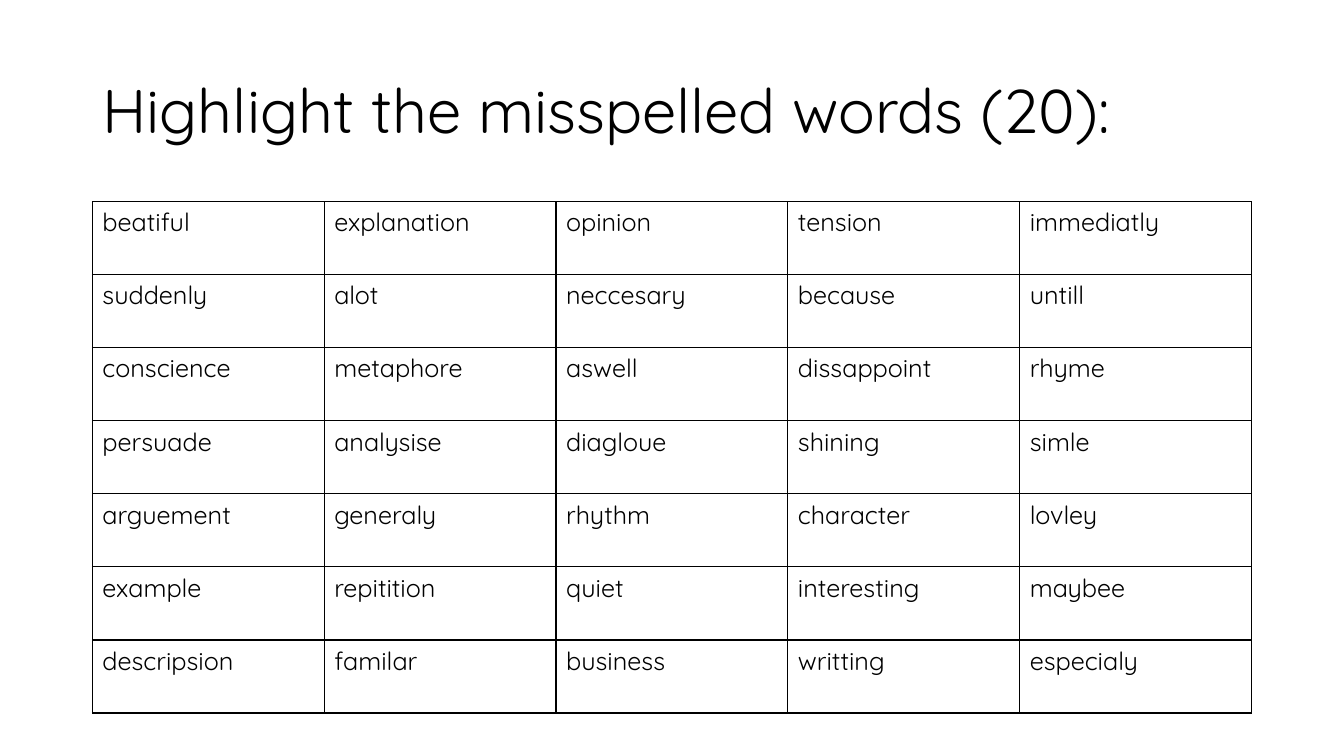
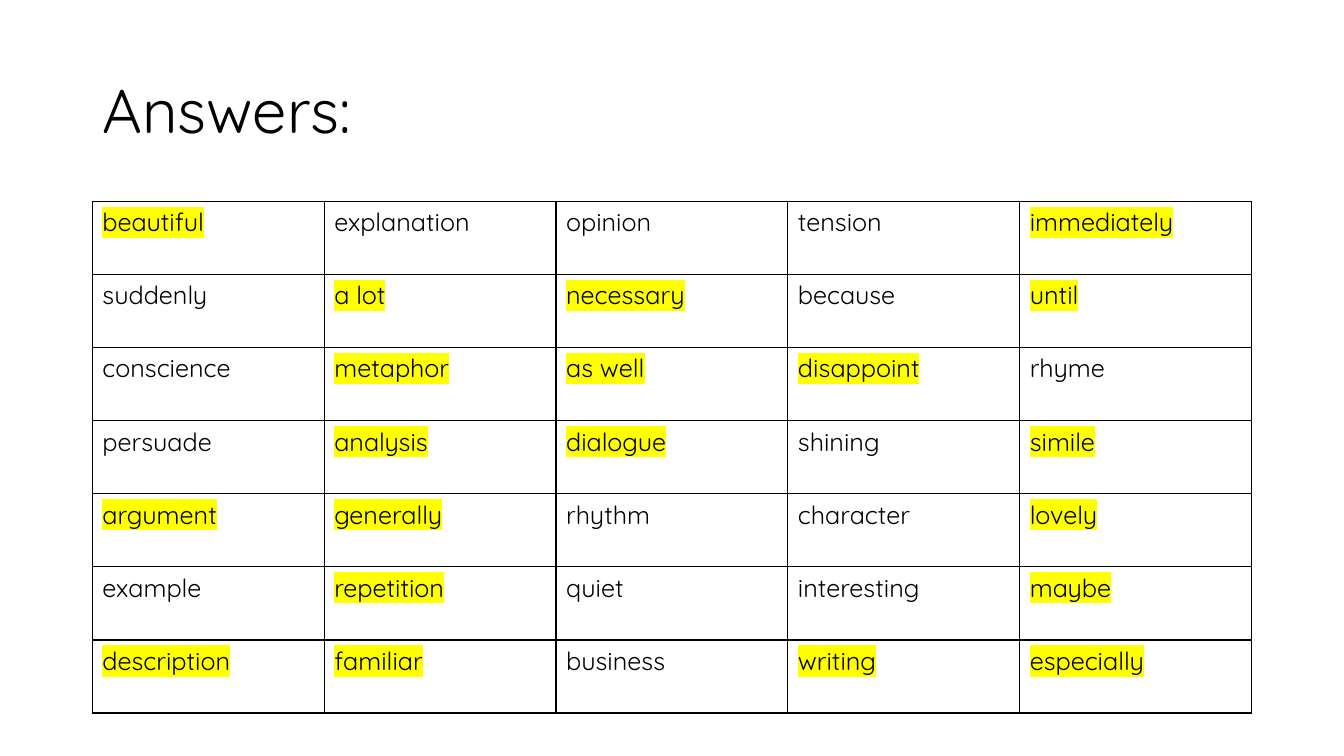
from lxml.etree import SubElement
from pptx import Presentation
from pptx.dml.color import RGBColor
from pptx.enum.text import MSO_ANCHOR
from pptx.oxml.ns import qn
from pptx.util import Emu, Pt

PX = 7620
LEFT, WIDTH = 110, 1380
WORDS = [
    ["beatiful", "explanation", "opinion", "tension", "immediatly"],
    ["suddenly", "alot", "neccesary", "because", "untill"],
    ["conscience", "metaphore", "aswell", "dissappoint", "rhyme"],
    ["persuade", "analysise", "diagloue", "shining", "simle"],
    ["arguement", "generaly", "rhythm", "character", "lovley"],
    ["example", "repitition", "quiet", "interesting", "maybee"],
    ["descripsion", "familar", "business", "writting", "especialy"],
]
CORRECTIONS = {
    "beatiful": "beautiful", "immediatly": "immediately", "alot": "a lot",
    "neccesary": "necessary", "untill": "until", "metaphore": "metaphor",
    "aswell": "as well", "dissappoint": "disappoint", "analysise": "analysis",
    "diagloue": "dialogue", "simle": "simile", "arguement": "argument",
    "generaly": "generally", "lovley": "lovely", "repitition": "repetition",
    "maybee": "maybe", "descripsion": "description", "familar": "familiar",
    "writting": "writing", "especialy": "especially",
}


def px(length):
    return Emu(length * PX)


def color(code):
    return RGBColor.from_string(code)


class Deck:
    FONT = "Quicksand"
    INK, PAPER, MARKER = "000000", "FFFFFF", "FFFF00"
    TITLE_SIZE, WORD_SIZE, BORDER = 44, 18, 1

    def __init__(self, width, height):
        self.prs = Presentation()
        self.prs.slide_width, self.prs.slide_height = px(width), px(height)
        self.slide = None

    def add_slide(self, heading):
        self.slide = self.prs.slides.add_slide(self.prs.slide_layouts[6])
        background = self.slide.background.fill
        background.solid()
        background.fore_color.rgb = color(self.PAPER)
        self.title(heading)

    def run(self, paragraph, text, size, marked=False):
        run = paragraph.add_run()
        run.text = text
        run.font.name = self.FONT
        run.font.size = Pt(size)
        run.font.color.rgb = color(self.INK)
        if marked:
            properties = run.font._element
            highlight = SubElement(properties, qn("a:highlight"))
            SubElement(highlight, qn("a:srgbClr"), val=self.MARKER)
            properties.find(qn("a:solidFill")).addnext(highlight)

    def title(self, heading):
        box = self.slide.shapes.add_textbox(px(LEFT), px(48), px(WIDTH), px(174))
        frame = box.text_frame
        frame.word_wrap = True
        frame.vertical_anchor = MSO_ANCHOR.MIDDLE
        paragraph = frame.paragraphs[0]
        paragraph.line_spacing = 0.9
        self.run(paragraph, heading, self.TITLE_SIZE)

    def style_cell(self, cell):
        properties = cell._tc.get_or_add_tcPr()
        for side in ("lnL", "lnR", "lnT", "lnB"):
            line = SubElement(properties, qn(f"a:{side}"), w=str(Pt(self.BORDER)))
            fill = SubElement(line, qn("a:solidFill"))
            SubElement(fill, qn("a:srgbClr"), val=self.INK)
        cell.fill.solid()
        cell.fill.fore_color.rgb = color(self.PAPER)

    def word_table(self, words, corrections, top=240, row_height=87):
        rows, columns = len(words), len(words[0])
        table = self.slide.shapes.add_table(
            rows, columns, px(LEFT), px(top), px(WIDTH), px(rows * row_height)
        ).table
        table.first_row = table.horz_banding = False
        for r, row in enumerate(words):
            for c, word in enumerate(row):
                cell = table.cell(r, c)
                self.style_cell(cell)
                self.run(
                    cell.text_frame.paragraphs[0],
                    corrections.get(word, word),
                    self.WORD_SIZE,
                    word in corrections,
                )


def main():
    deck = Deck(1600, 900)
    for heading, corrections in (
        ("Highlight the misspelled words (20):", {}),
        ("Answers:", CORRECTIONS),
    ):
        deck.add_slide(heading)
        deck.word_table(WORDS, corrections)
    deck.prs.save("out.pptx")


if __name__ == "__main__":
    main()
